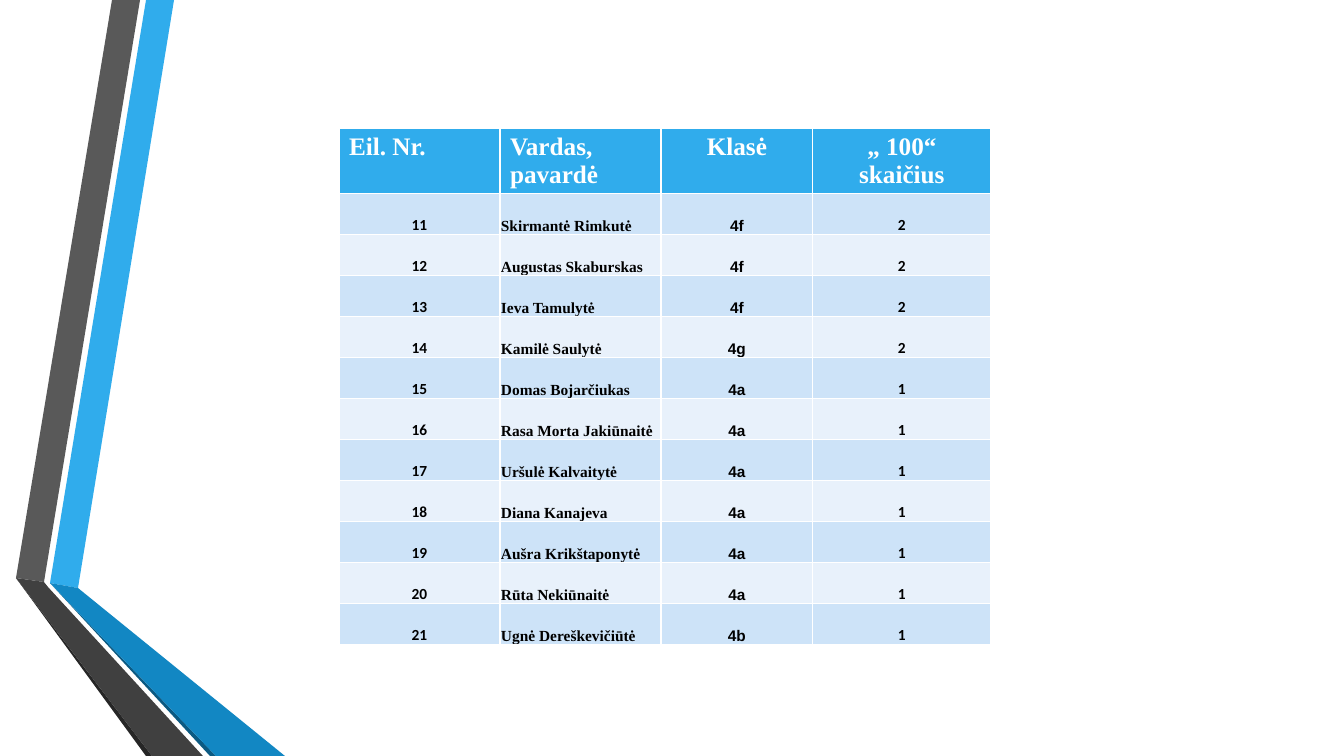
"""Build a slide with a class results table beside a folded ribbon."""
import pptx
import pptx.dml.color
import pptx.enum.text
import pptx.util

PX = 914400 / 100.8
ALIGN = pptx.enum.text.PP_ALIGN


def px(n):
    return pptx.util.Emu(round(n * PX))


def color(code):
    return pptx.dml.color.RGBColor.from_string(code)


deck = pptx.Presentation()
deck.slide_width, deck.slide_height = px(1344), px(756)
slide = deck.slides.add_slide(deck.slide_layouts[6])

ribbons = [
    ("30ACEC", [(50, 583), (78, 588), (174, 0), (146, 0)]),
    ("595959", [(140, 0), (112, 0), (16, 578), (44, 582)]),
    ("262626", [(16, 578), (146, 756), (152, 756)]),
    ("0C5A82", [(50, 583), (210, 756), (216, 756)]),
    ("1287C3", [(50, 583), (216, 756), (285, 756), (78, 588)]),
    ("404040", [(203, 756), (48, 587), (44, 582), (16, 578), (152, 756)]),
]
for fill, points in ribbons:
    draft = slide.shapes.build_freeform(*points[0], scale=PX)
    draft.add_line_segments(points[1:], close=True)
    ribbon = draft.convert_to_shape()
    ribbon.shadow.inherit = False
    ribbon.fill.solid()
    ribbon.fill.fore_color.rgb = color(fill)
    ribbon.line.fill.background()

heads = ["Eil. Nr.", "Vardas, pavardė", "Klasė", "„ 100“ skaičius"]
pupils = [
    ("Skirmantė Rimkutė", "4f", "2"),
    ("Augustas Skaburskas", "4f", "2"),
    ("Ieva Tamulytė", "4f", "2"),
    ("Kamilė Saulytė", "4g", "2"),
    ("Domas Bojarčiukas", "4a", "1"),
    ("Rasa Morta Jakiūnaitė", "4a", "1"),
    ("Uršulė Kalvaitytė", "4a", "1"),
    ("Diana Kanajeva", "4a", "1"),
    ("Aušra Krikštaponytė", "4a", "1"),
    ("Rūta Nekiūnaitė", "4a", "1"),
    ("Ugnė Dereškevičiūtė", "4b", "1"),
]
rows = [heads] + [(str(n), *pupil) for n, pupil in enumerate(pupils, 11)]
widths = [161, 161, 152, 178]
fonts = ["Calibri", "Times New Roman", "Arial", "Calibri"]

frame = slide.shapes.add_table(
    len(rows), len(heads), px(339), px(128), px(sum(widths)), px(515))
table = frame.table
for column, width in zip(table.columns, widths):
    column.width = px(width)

for r, row in enumerate(rows):
    table.rows[r].height = px(41 if r else 64)
    for c, text in enumerate(row):
        cell = table.cell(r, c)
        cell.text_frame.text = text
        para = cell.text_frame.paragraphs[0]
        font = para.runs[0].font
        font.bold = True
        cell.fill.solid()
        if r == 0:
            fill, ink, size, face = "30ACEC", "FFFFFF", 18, "Times New Roman"
            centred = c > 1
        else:
            fill = "CDE3F8" if r % 2 else "E8F1FB"
            ink, size, face = "000000", 11, fonts[c]
            centred = c != 1
            cell.vertical_anchor = pptx.enum.text.MSO_ANCHOR.BOTTOM
            cell.margin_left = cell.margin_right = cell.margin_top = px(1)
            cell.margin_bottom = 0
        cell.fill.fore_color.rgb = color(fill)
        font.color.rgb = color(ink)
        font.size = pptx.util.Pt(size)
        font.name = face
        para.alignment = ALIGN.CENTER if centred else ALIGN.LEFT

deck.save("out.pptx")
